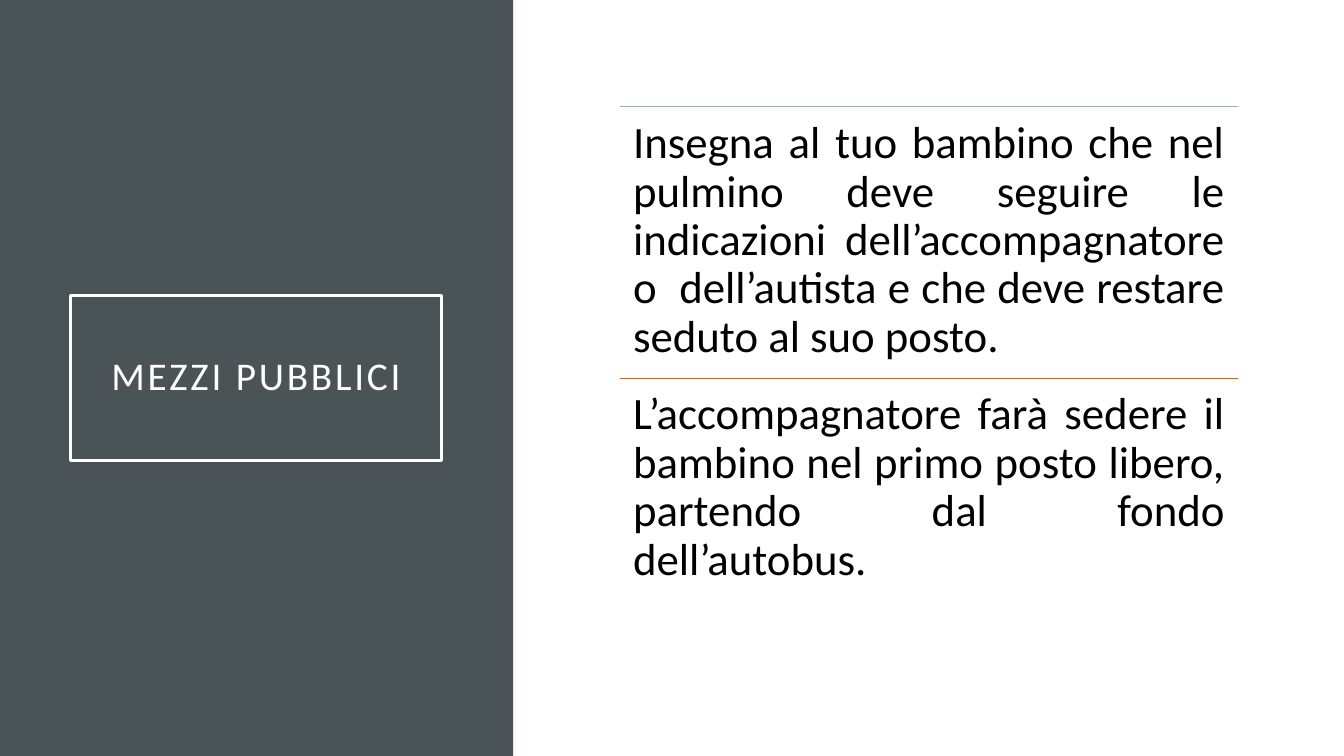
from lxml import etree
from pptx import Presentation
from pptx import util as u
from pptx.dml.color import RGBColor
from pptx.enum import shapes, text
from pptx.oxml.ns import qn

COLORS = {
    "panel": "4A5356",
    "white": "FFFFFF",
    "black": "000000",
    "blue_rule": "9BAFB5",
    "orange_rule": "C96731",
}
TITLE_FORMAT = {"name": "Calibri", "size": u.Pt(28)}
BODY_FORMAT = {"name": "Calibri", "size": u.Pt(32)}
ADVICE = [
    ("blue_rule", "Insegna al tuo bambino che nel pulmino deve seguire le indicazioni "
     "dell’accompagnatore o  dell’autista e che deve restare seduto al suo posto."),
    ("orange_rule", "L’accompagnatore farà sedere il bambino nel primo posto libero, "
     "partendo dal fondo dell’autobus."),
]


def color(name):
    return RGBColor.from_string(COLORS[name])


def write_text(shape, words, font_format, color_name, alignment, anchor, inset):
    frame = shape.text_frame
    frame_format = {"word_wrap": True, "vertical_anchor": anchor}
    for side in ("left", "right", "top", "bottom"):
        frame_format[f"margin_{side}"] = u.Inches(inset)
    for name, value in frame_format.items():
        setattr(frame, name, value)
    paragraph = frame.paragraphs[0]
    paragraph.alignment = alignment
    paragraph.line_spacing = 0.9
    run = paragraph.add_run()
    run.text = words
    for name, value in font_format.items():
        setattr(run.font, name, value)
    run.font.color.rgb = color(color_name)
    return run


def add_rectangle(slide, left, top, width, height):
    shape = slide.shapes.add_shape(
        shapes.MSO_SHAPE.RECTANGLE,
        u.Inches(left), u.Inches(top), u.Inches(width), u.Inches(height))
    shape.shadow.inherit = False
    return shape


def add_title_panel(slide, left, top, width, height):
    panel = add_rectangle(slide, left, top, width, height)
    panel.fill.solid()
    panel.fill.fore_color.rgb = color("panel")
    panel.line.fill.background()

    frame_height = 1.64
    title = add_rectangle(slide, left + 0.7, top + (height - frame_height) / 2,
                          3.68, frame_height)
    title.fill.background()
    title.line.color.rgb = color("white")
    title.line.width = u.Pt(2.5)
    run = write_text(title, "MEZZI PUBBLICI", TITLE_FORMAT, "white",
                     text.PP_ALIGN.CENTER, text.MSO_ANCHOR.MIDDLE, 0.2)
    run.font._element.set("spc", "200")


def add_rule(slide, left, top, width, color_name):
    rule = slide.shapes.add_connector(
        shapes.MSO_CONNECTOR.STRAIGHT,
        u.Inches(left), u.Inches(top), u.Inches(left + width), u.Inches(top))
    rule.line.color.rgb = color(color_name)
    rule.line.width = u.Pt(0.5)
    etree.SubElement(rule._element.spPr, qn("a:effectLst"))


def add_advice_list(slide, left, top, width, height):
    row_height = height / len(ADVICE)
    for index, (rule_color, words) in enumerate(ADVICE):
        row_top = top + index * row_height
        add_rule(slide, left, row_top, width, rule_color)
        box = slide.shapes.add_textbox(u.Inches(left), u.Inches(row_top),
                                       u.Inches(width), u.Inches(row_height))
        write_text(box, words, BODY_FORMAT, "black",
                   text.PP_ALIGN.JUSTIFY, text.MSO_ANCHOR.TOP, 0.13)


def main():
    presentation = Presentation()
    presentation.slide_width = u.Inches(13.33)
    presentation.slide_height = u.Inches(7.5)
    slide = presentation.slides.add_slide(presentation.slide_layouts[6])
    add_title_panel(slide, 0, 0, 5.09, 7.5)
    add_advice_list(slide, 6.15, 1.06, 6.13, 5.38)
    presentation.save("out.pptx")


if __name__ == "__main__":
    main()
